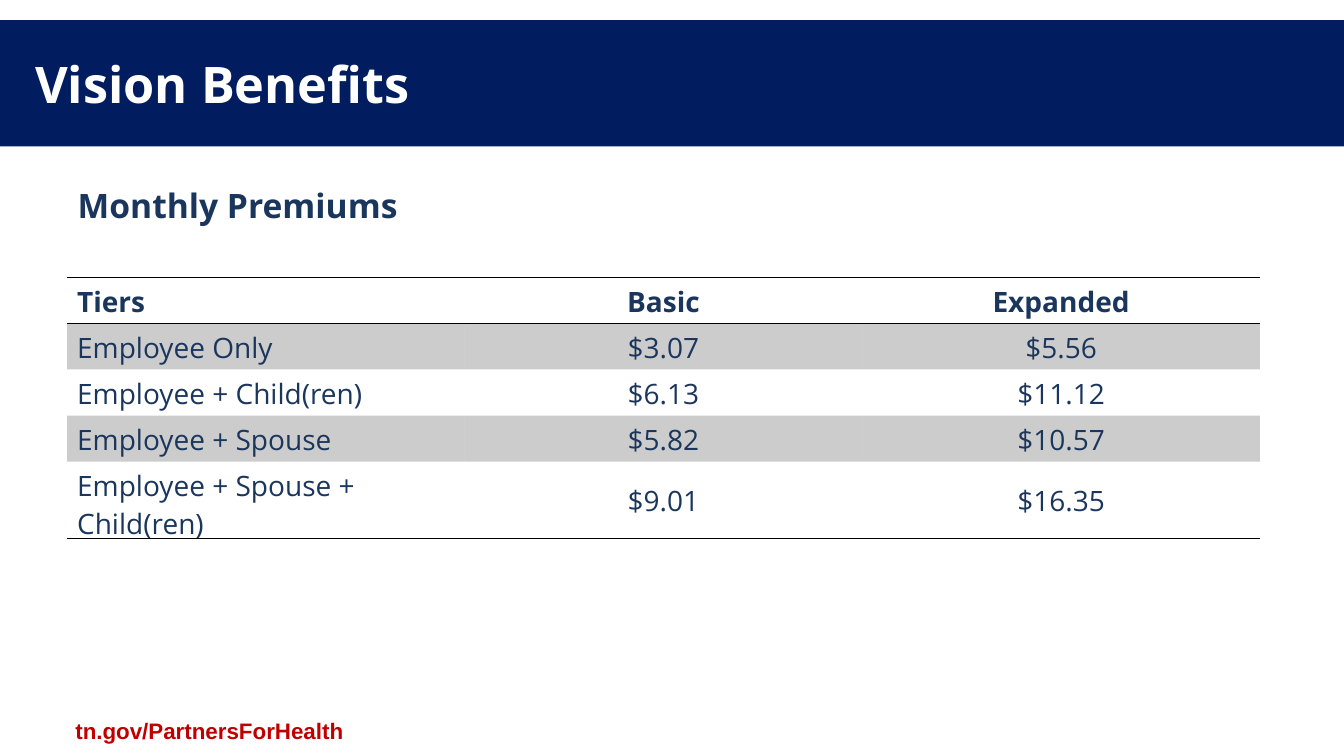
from lxml import etree
from pptx import Presentation
from pptx.dml.color import RGBColor
from pptx.enum.shapes import MSO_SHAPE
from pptx.enum.text import MSO_ANCHOR, PP_ALIGN
from pptx.oxml.ns import qn
from pptx.util import Cm, Pt

RECTANGLE = MSO_SHAPE.RECTANGLE
MIDDLE = MSO_ANCHOR.MIDDLE
LEFT, CENTER = PP_ALIGN.LEFT, PP_ALIGN.CENTER

NAVY = RGBColor(0x01, 0x1D, 0x5F)
SLATE = RGBColor(0x1B, 0x36, 0x5D)
RED = RGBColor(0xC0, 0x00, 0x00)
WHITE = RGBColor(0xFF, 0xFF, 0xFF)
BLACK = RGBColor(0x00, 0x00, 0x00)

NO_STYLE = "{2D5ABB26-0587-4C30-8999-92F81FD0307C}"
BAND_ALPHA = 20000
SLIDE_WIDTH, SLIDE_HEIGHT = Cm(33.87), Cm(19.05)
COLUMN_WIDTH, ROW_HEIGHT = Cm(10.02), Cm(1.16)

TITLE = {"name": "Open Sans", "size": Pt(36), "bold": True, "color": WHITE}
HEADING = {"name": "Open Sans", "size": Pt(24), "bold": True, "color": SLATE}
ADDRESS = {"name": "Arial", "size": Pt(16), "bold": True, "color": RED}
HEADER_CELL = {"name": "Open Sans", "size": Pt(20), "bold": True, "color": SLATE}
BODY_CELL = {**HEADER_CELL, "bold": False}

PREMIUMS = [
    ("Tiers", "Basic", "Expanded"),
    ("Employee Only", "$3.07", "$5.56"),
    ("Employee + Child(ren)", "$6.13", "$11.12"),
    ("Employee + Spouse", "$5.82", "$10.57"),
    ("Employee + Spouse + Child(ren)", "$9.01", "$16.35"),
]


def write_text(frame, text, style, align=LEFT, line_spacing=1.0):
    frame.word_wrap = True
    para = frame.paragraphs[0]
    para.alignment = align
    para.line_spacing = line_spacing
    span = para.add_run()
    span.text = text
    for key, value in style.items():
        if key == "color":
            span.font.color.rgb = value
        else:
            setattr(span.font, key, value)


def add_title_bar(page, text):
    bar = page.shapes.add_shape(RECTANGLE, 0, Cm(0.51), SLIDE_WIDTH, Cm(3.18))
    bar.shadow.inherit = False
    bar.fill.solid()
    bar.fill.fore_color.rgb = NAVY
    bar.line.fill.background()
    bar.text_frame.vertical_anchor = MIDDLE
    bar.text_frame.margin_left = Cm(0.89)
    write_text(bar.text_frame, text, TITLE)


def add_text(page, place, text, style, line_spacing):
    box = page.shapes.add_textbox(*place)
    write_text(box.text_frame, text, style, line_spacing=line_spacing)


def add_border(cell, side):
    line = etree.Element(qn(f"a:{side}"), w=str(Pt(1)))
    fill = etree.SubElement(line, qn("a:solidFill"))
    etree.SubElement(fill, qn("a:srgbClr"), val=str(BLACK))
    cell._tc.get_or_add_tcPr().insert(0, line)


def shade_cell(cell):
    cell.fill.solid()
    cell.fill.fore_color.rgb = BLACK
    color = cell._tc.tcPr.find(f".//{qn('a:srgbClr')}")
    etree.SubElement(color, qn("a:alpha"), val=str(BAND_ALPHA))


def add_premium_table(page, rows):
    row_count, column_count = len(rows), len(rows[0])
    frame = page.shapes.add_table(
        row_count, column_count, Cm(1.69), Cm(6.99),
        COLUMN_WIDTH * column_count, ROW_HEIGHT * row_count)
    table = frame.table
    table._tbl.tblPr.find(qn("a:tableStyleId")).text = NO_STYLE
    table.first_row = table.horz_banding = False
    for row_index, row in enumerate(rows):
        table.rows[row_index].height = ROW_HEIGHT
        for column_index, text in enumerate(row):
            cell = table.cell(row_index, column_index)
            cell.vertical_anchor = MIDDLE
            write_text(cell.text_frame, text,
                       BODY_CELL if row_index else HEADER_CELL,
                       CENTER if column_index else LEFT)
            if row_index % 2:
                shade_cell(cell)
            else:
                cell.fill.background()
            if row_index in (0, row_count - 1):
                add_border(cell, "lnB")
            if row_index == 0:
                add_border(cell, "lnT")


def main():
    deck = Presentation()
    deck.slide_width, deck.slide_height = SLIDE_WIDTH, SLIDE_HEIGHT
    page = deck.slides.add_slide(deck.slide_layouts[6])
    add_title_bar(page, "Vision Benefits")
    add_text(page, (Cm(1.71), Cm(4.72), Cm(30.48), Cm(11.58)),
             "Monthly Premiums", HEADING, 0.8)
    add_text(page, (Cm(1.65), Cm(18.03), Cm(10.16), Cm(0.86)),
             "tn.gov/PartnersForHealth", ADDRESS, 0.9)
    add_premium_table(page, PREMIUMS)
    deck.save("out.pptx")


if __name__ == "__main__":
    main()
